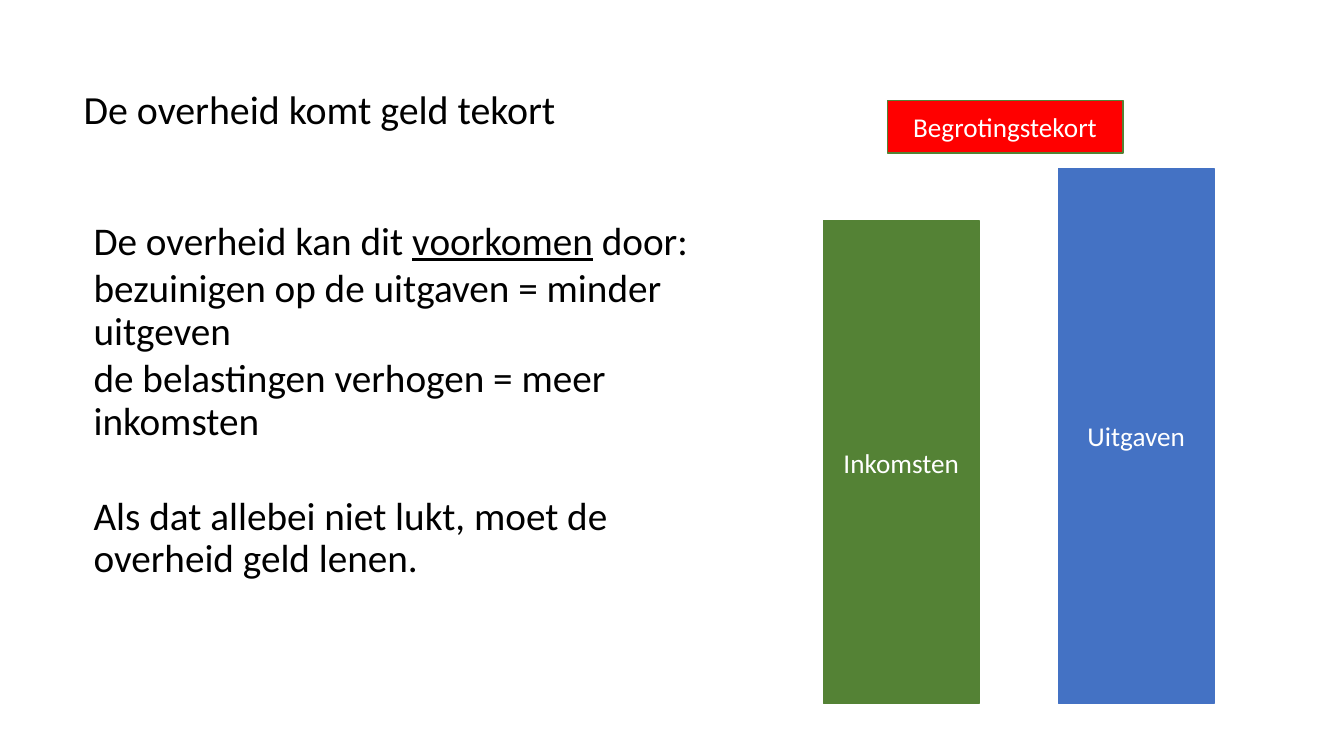
"""Build a slide about a government budget deficit."""
from dataclasses import dataclass

from pptx import Presentation
from pptx import util as u
from pptx.dml.color import RGBColor
from pptx.enum import shapes, text


@dataclass(frozen=True)
class Theme:
    """Colours, font and type sizes."""
    font: str = "Calibri"
    ink: str = "000000"
    light: str = "FFFFFF"
    green: str = "548235"
    blue: str = "4472C4"
    red: str = "FF0000"
    title_size: float = 28.5
    body_size: float = 28
    label_size: float = 19.4


THEME = Theme()
BAR_WIDTH = 1.54
BAR_BOTTOM = 6.98


def add_text(paragraph, content, size, color=THEME.ink, underline=False):
    """Append one formatted run to a paragraph."""
    run = paragraph.add_run()
    run.text = content
    run.font.name = THEME.font
    run.font.size = u.Pt(size)
    run.font.color.rgb = RGBColor.from_string(color)
    run.font.underline = underline


def set_title(slide, content, left, top, width, height):
    """Place and format the title placeholder."""
    title = slide.shapes.title
    title.left, title.top = u.Inches(left), u.Inches(top)
    title.width, title.height = u.Inches(width), u.Inches(height)
    frame = title.text_frame
    frame.margin_left = frame.margin_right = 0
    frame.margin_top = frame.margin_bottom = 0
    frame.vertical_anchor = text.MSO_ANCHOR.MIDDLE
    frame.auto_size = text.MSO_AUTO_SIZE.NONE
    frame.word_wrap = True
    paragraph = frame.paragraphs[0]
    paragraph.alignment = text.PP_ALIGN.LEFT
    paragraph.line_spacing = 0.9
    add_text(paragraph, content, THEME.title_size)


def add_body(slide, paragraphs, left, top, width, height):
    """Add body text from (space before, runs) pairs."""
    box = slide.shapes.add_textbox(
        u.Inches(left), u.Inches(top), u.Inches(width), u.Inches(height))
    frame = box.text_frame
    frame.word_wrap = True
    for index, (space, runs) in enumerate(paragraphs):
        paragraph = frame.add_paragraph() if index else frame.paragraphs[0]
        paragraph.line_spacing = 0.9
        paragraph.space_before = u.Pt(space)
        for content, underline in runs:
            add_text(paragraph, content, THEME.body_size, underline=underline)


def add_block(slide, label, fill, line, left, top, width, height):
    """Add a filled rectangle with a centred label."""
    block = slide.shapes.add_shape(
        shapes.MSO_SHAPE.RECTANGLE,
        u.Inches(left), u.Inches(top), u.Inches(width), u.Inches(height))
    block.shadow.inherit = False
    block.fill.solid()
    block.fill.fore_color.rgb = RGBColor.from_string(fill)
    block.line.color.rgb = RGBColor.from_string(line)
    block.line.width = u.Pt(1)
    frame = block.text_frame
    frame.word_wrap = True
    frame.vertical_anchor = text.MSO_ANCHOR.MIDDLE
    paragraph = frame.paragraphs[0]
    paragraph.alignment = text.PP_ALIGN.CENTER
    add_text(paragraph, label, THEME.label_size, THEME.light)


def main():
    """Build and save the presentation."""
    presentation = Presentation()
    presentation.slide_width = u.Inches(13.33)
    presentation.slide_height = u.Inches(7.5)
    slide = presentation.slides.add_slide(
        presentation.slide_layouts.get_by_name("Title Only"))

    set_title(slide, "De overheid komt geld tekort", 0.83, 0.83, 11.67, 0.55)
    add_body(slide, [
        (0, [("De overheid kan dit ", False), ("voorkomen", True), (" door:", False)]),
        (3.6, [("bezuinigen op de uitgaven = minder uitgeven", False)]),
        (3.6, [("de belastingen verhogen = meer inkomsten", False)]),
        (38, [("Als dat allebei niet lukt, moet de overheid geld lenen.", False)]),
    ], 0.83, 2.15, 6.68, 4.51)

    for label, color, left, top in (
        ("Inkomsten", THEME.green, 8.17, 2.19),
        ("Uitgaven", THEME.blue, 10.5, 1.67),
    ):
        add_block(slide, label, color, color, left, top, BAR_WIDTH, BAR_BOTTOM - top)
    add_block(slide, "Begrotingstekort", THEME.red, THEME.green, 8.8, 1, 2.34, 0.52)

    presentation.save("out.pptx")


if __name__ == "__main__":
    main()
